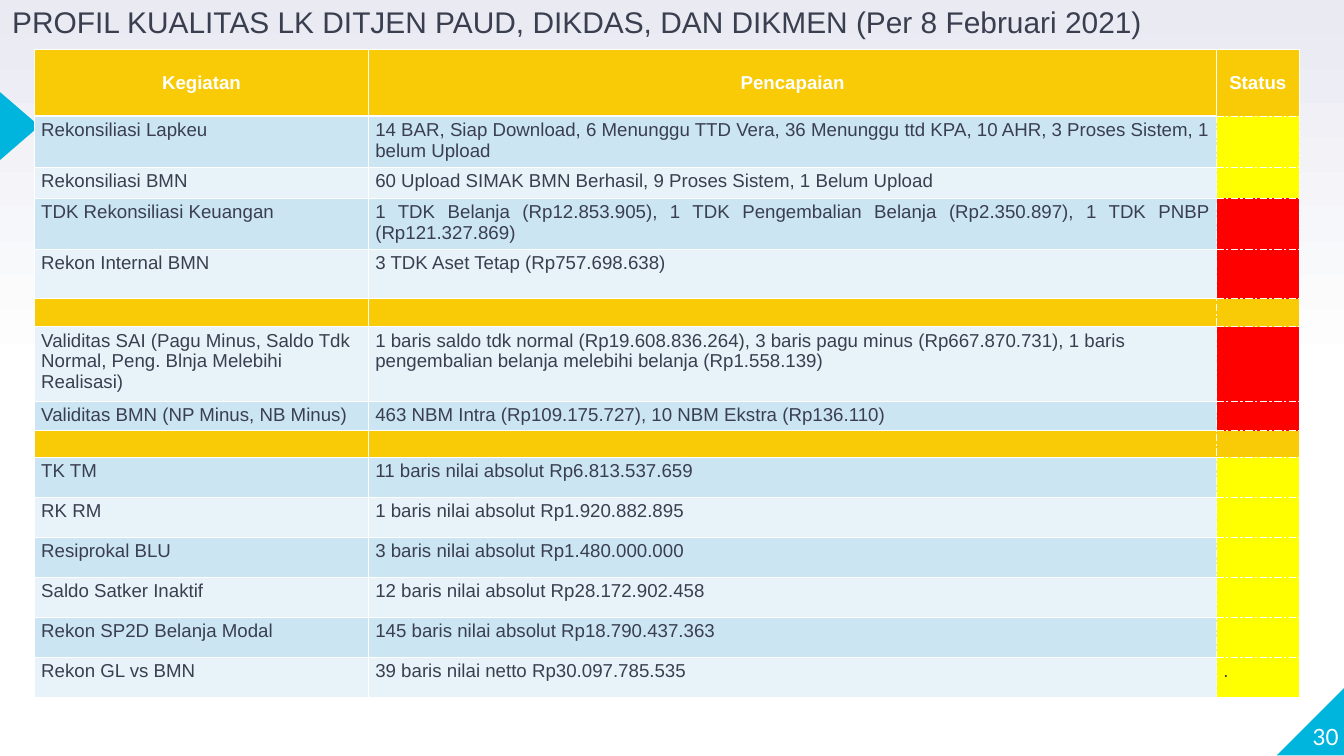
from typing import NamedTuple

from lxml import etree
from pptx import Presentation
from pptx.dml.color import RGBColor
from pptx.enum.shapes import MSO_SHAPE
from pptx.enum.text import MSO_ANCHOR, MSO_AUTO_SIZE, PP_ALIGN
from pptx.oxml.ns import qn
from pptx.util import Pt

LEFT, CENTER, RIGHT, JUSTIFY = PP_ALIGN.LEFT, PP_ALIGN.CENTER, PP_ALIGN.RIGHT, PP_ALIGN.JUSTIFY
TOP, MIDDLE, BOTTOM = MSO_ANCHOR.TOP, MSO_ANCHOR.MIDDLE, MSO_ANCHOR.BOTTOM
TRIANGLE, CORNER = MSO_SHAPE.ISOSCELES_TRIANGLE, MSO_SHAPE.RIGHT_TRIANGLE
NO_AUTOFIT = MSO_AUTO_SIZE.NONE

COLORS = {
    "white": "FFFFFF", "haze": "E9EAF2", "accent": "00B5DD", "ink": "3A3F50",
    "gold": "F9CB07", "band_dark": "CCE5F2", "band_light": "E7F3F9",
    "yellow": "FFFF00", "red": "FF0000",
}
SOLID, DASH_DOT = "solid", "sysDashDot"
COLUMN_WIDTHS = (358, 908.6, 88.4)
STATUS_COLUMN = 2


class Activity(NamedTuple):
    name: str
    result: str
    status: str
    height: float = 42.8
    note: str = ""
    align: PP_ALIGN = LEFT


class Border(NamedTuple):
    width: float = 1
    dash: str = SOLID


def separator(height: float) -> Activity:
    return Activity("", "", "gold", height)


HEADINGS = ("Kegiatan", "Pencapaian", "Status")
ACTIVITIES = (
    Activity("Rekonsiliasi Lapkeu",
             "14 BAR, Siap Download, 6 Menunggu TTD Vera, 36 Menunggu ttd KPA, "
             "10 AHR, 3 Proses Sistem, 1 belum Upload", "yellow", 52),
    Activity("Rekonsiliasi BMN",
             "60 Upload SIMAK BMN Berhasil, 9 Proses Sistem, 1 Belum Upload", "yellow", 32.4),
    Activity("TDK Rekonsiliasi Keuangan",
             "1 TDK Belanja (Rp12.853.905), 1 TDK Pengembalian Belanja (Rp2.350.897), "
             "1 TDK PNBP (Rp121.327.869)", "red", 55.4, align=JUSTIFY),
    Activity("Rekon Internal BMN", "3 TDK Aset Tetap (Rp757.698.638)", "red", 52.6),
    separator(30.2),
    Activity("Validitas SAI (Pagu Minus, Saldo Tdk Normal, Peng. Blnja Melebihi Realisasi)",
             "1 baris saldo tdk normal (Rp19.608.836.264), 3 baris pagu minus (Rp667.870.731), "
             "1 baris pengembalian belanja melebihi belanja (Rp1.558.139)", "red", 79.9),
    Activity("Validitas BMN (NP Minus, NB Minus)",
             "463 NBM Intra (Rp109.175.727), 10 NBM Ekstra (Rp136.110)", "red", 30.2),
    separator(28.2),
    Activity("TK TM", "11 baris nilai absolut Rp6.813.537.659", "yellow"),
    Activity("RK RM", "1 baris nilai absolut Rp1.920.882.895", "yellow"),
    Activity("Resiprokal BLU", "3 baris nilai absolut Rp1.480.000.000", "yellow"),
    Activity("Saldo Satker Inaktif", "12 baris nilai absolut Rp28.172.902.458", "yellow"),
    Activity("Rekon SP2D Belanja Modal", "145 baris nilai absolut Rp18.790.437.363", "yellow"),
    Activity("Rekon GL vs BMN", "39 baris nilai netto Rp30.097.785.535", "yellow", note="."),
)
HEADER_HEIGHT = 72


def rgb(color: str) -> RGBColor:
    return RGBColor.from_string(COLORS[color])


def write(frame, text: str, size: float, color: str, align: PP_ALIGN = LEFT,
          font: str = "Arial", bold: bool = False) -> None:
    frame.text = text
    paragraph = frame.paragraphs[0]
    paragraph.alignment = align
    for run in paragraph.runs:
        run.font.name, run.font.size, run.font.bold = font, Pt(size), bold
        run.font.color.rgb = rgb(color)


def set_borders(cell, **sides: Border) -> None:
    properties = cell._tc.get_or_add_tcPr()
    for side in "LRTB":
        border = sides.get(side, Border())
        line = etree.SubElement(properties, qn(f"a:ln{side}"), w=str(Pt(border.width)))
        fill = etree.SubElement(line, qn("a:solidFill"))
        etree.SubElement(fill, qn("a:srgbClr"), val=COLORS["white"])
        etree.SubElement(line, qn("a:prstDash"), val=border.dash)


def fill_cell(cell, text: str, fill: str, color: str = "ink", align: PP_ALIGN = LEFT,
              anchor: MSO_ANCHOR = TOP, bold: bool = False, **sides: Border) -> None:
    set_borders(cell, **sides)
    cell.fill.solid()
    cell.fill.fore_color.rgb = rgb(fill)
    cell.vertical_anchor = anchor
    write(cell.text_frame, text, 20, color, align, bold=bold)


def add_accent(slide, kind: MSO_SHAPE, left: float, top: float, width: float, height: float):
    accent = slide.shapes.add_shape(kind, Pt(left), Pt(top), Pt(width), Pt(height))
    accent.shadow.inherit = False
    accent.fill.solid()
    accent.fill.fore_color.rgb = rgb("accent")
    accent.line.fill.background()
    return accent


def paint_background(slide) -> None:
    fill = slide.background.fill
    fill.gradient()
    fill.gradient_angle = 90
    for stop, position, color in zip(fill.gradient_stops, (0.5, 1), ("white", "haze")):
        stop.position = position
        stop.color.rgb = rgb(color)


def add_profile_table(slide) -> None:
    heights = [HEADER_HEIGHT] + [activity.height for activity in ACTIVITIES]
    table = slide.shapes.add_table(
        len(heights), len(COLUMN_WIDTHS), Pt(36.9), Pt(52.4),
        Pt(sum(COLUMN_WIDTHS)), Pt(sum(heights))).table
    for column, width in zip(table.columns, COLUMN_WIDTHS):
        column.width = Pt(width)
    for row, height in zip(table.rows, heights):
        row.height = Pt(height)

    dashed = Border(dash=DASH_DOT)
    for index, heading in enumerate(HEADINGS):
        bottom = dashed if index == STATUS_COLUMN else Border(3)
        fill_cell(table.cell(0, index), heading, "gold", "white", CENTER, MIDDLE, True, B=bottom)

    for index, activity in enumerate(ACTIVITIES, start=1):
        band = "band_dark" if index % 2 else "band_light"
        fill = band if activity.name else "gold"
        fill_cell(table.cell(index, 0), activity.name, fill)
        fill_cell(table.cell(index, 1), activity.result, fill, align=activity.align, R=dashed)
        fill_cell(table.cell(index, STATUS_COLUMN), activity.note, activity.status,
                  L=dashed, R=dashed, T=dashed, B=dashed)


def add_title(slide) -> None:
    title = slide.shapes.title
    title.left, title.top, title.width, title.height = Pt(5.8), Pt(0), Pt(1328.4), Pt(46)
    frame = title.text_frame
    frame.auto_size = NO_AUTOFIT
    frame.vertical_anchor = TOP
    write(frame, "PROFIL KUALITAS LK DITJEN PAUD, DIKDAS, DAN DIKMEN (Per 8 Februari 2021)",
          32, "ink")


def add_page_number(slide) -> None:
    number = slide.shapes.add_textbox(Pt(1362.2), Pt(730), Pt(72), Pt(73.4))
    frame = number.text_frame
    frame.word_wrap = True
    frame.vertical_anchor = BOTTOM
    frame.margin_left = frame.margin_right = frame.margin_top = frame.margin_bottom = 0
    write(frame, "30", 24, "white", RIGHT, "Lato")


def main() -> None:
    presentation = Presentation()
    presentation.slide_width, presentation.slide_height = Pt(1440), Pt(810)
    slide = presentation.slides.add_slide(presentation.slide_layouts[5])
    paint_background(slide)
    corner = add_accent(slide, CORNER, 1368, 736, 73.4, 73.4)
    corner._element.spPr.get_or_add_xfrm().set("flipH", "1")
    add_accent(slide, TRIANGLE, -15.8, 113.8, 73.4, 42.5).rotation = 90
    add_page_number(slide)
    add_profile_table(slide)
    add_title(slide)
    presentation.save("out.pptx")


if __name__ == "__main__":
    main()
